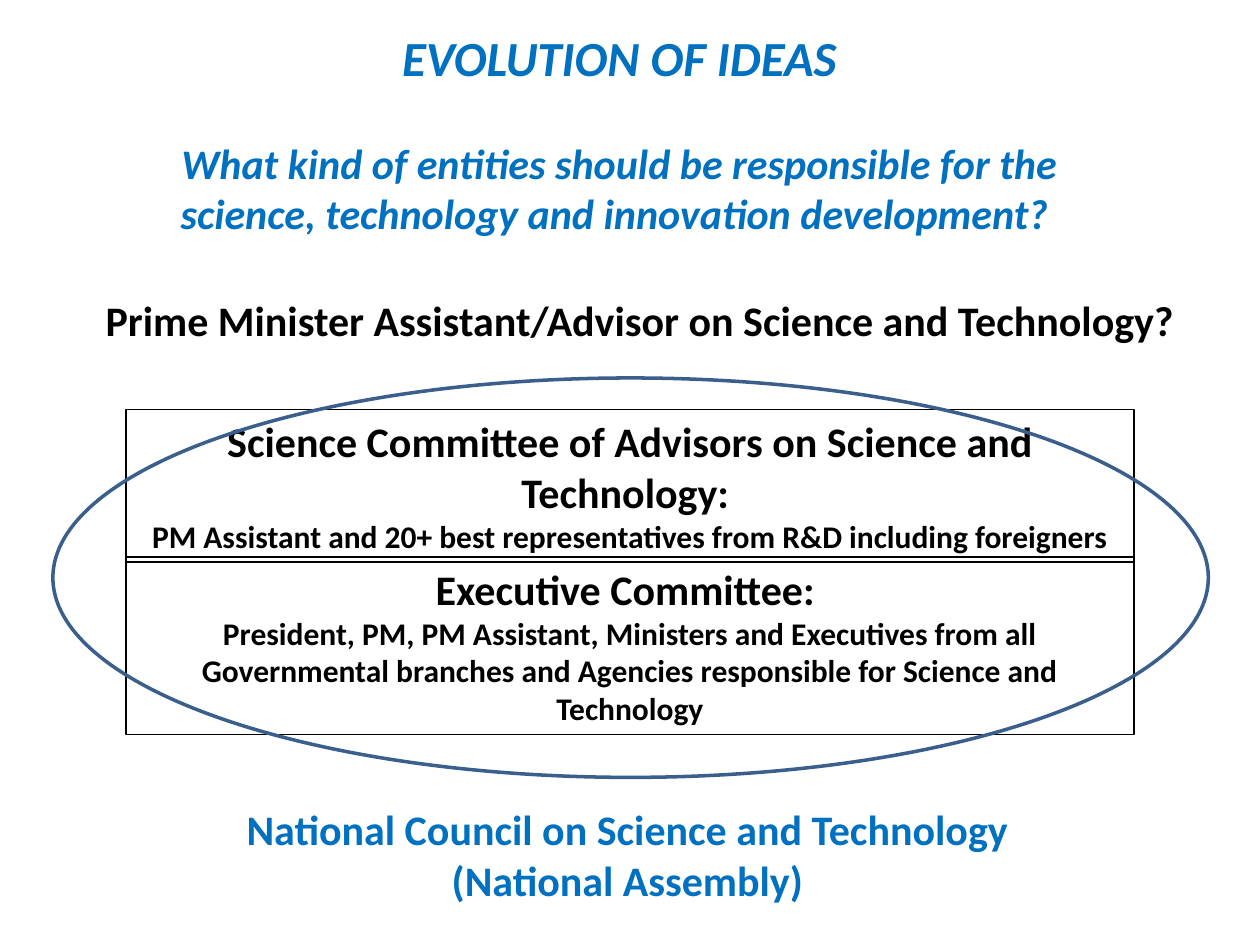
"""Build the slide on the evolution of ideas about science governance."""
from pptx import Presentation
from pptx.dml.color import RGBColor
from pptx.enum.shapes import MSO_SHAPE
from pptx.enum.text import PP_ALIGN
from pptx.util import Inches, Pt

CENTER, LEFT = PP_ALIGN.CENTER, PP_ALIGN.LEFT
OVAL = MSO_SHAPE.OVAL
COLORS = {"black": "000000", "blue": "0070C0", "oval": "3A5F8C"}


def add_text(s, box, paras, color, align=CENTER, italic=False, wrap=True, border=False):
    sp = s.shapes.add_textbox(*[Inches(v) for v in box])
    if border:
        sp.line.color.rgb = RGBColor.from_string(COLORS["black"])
        sp.line.width = Pt(0.75)
    tf = sp.text_frame
    tf.word_wrap = wrap
    for i, (text, size) in enumerate(paras):
        p = tf.paragraphs[0] if i == 0 else tf.add_paragraph()
        p.text = text
        p.alignment = align
        p.font.name = "Calibri"
        p.font.size = Pt(size)
        p.font.bold = True
        p.font.italic = italic
        p.font.color.rgb = RGBColor.from_string(COLORS[color])
    return tf


prs = Presentation()
prs.slide_width, prs.slide_height = Inches(10), Inches(7.5)
s = prs.slides.add_slide(prs.slide_layouts[6])

add_text(s, (1, 3.25, 8, 1.21), [
    ("Science Committee of Advisors on Science and Technology: ", 24),
    ("PM Assistant and 20+ best representatives from R&D including foreigners", 18),
], "black", border=True)

tf = add_text(s, (0.83, 0.17, 8.17, 2.59), [
    ("EVOLUTION OF IDEAS", 28),
    ("What kind of entities should be responsible for the science, "
     "technology and innovation development? ", 24),
], "blue", italic=True)
tf.paragraphs[1].space_before = Pt(29)

add_text(s, (1, 4.42, 8, 1.41), [
    ("Executive Committee: ", 24),
    ("President, PM, PM Assistant, Ministers and Executives from all Governmental "
     "branches and Agencies responsible for Science and Technology", 18),
], "black", border=True)

sp = s.shapes.add_shape(OVAL, Inches(0.42), Inches(3), Inches(9.17), Inches(3.17))
sp.shadow.inherit = False
sp.fill.background()
sp.line.color.rgb = RGBColor.from_string(COLORS["oval"])
sp.line.width = Pt(2)

add_text(s, (1.83, 6.33, 6.3, 0.91), [
    ("National Council on Science and Technology", 24),
    ("(National Assembly)", 24),
], "blue", wrap=False)

add_text(s, (0.74, 2.29, 8.76, 0.91), [
    ("Prime Minister Assistant/Advisor on Science and Technology?", 24),
], "black", align=LEFT, wrap=False)

prs.save("out.pptx")
